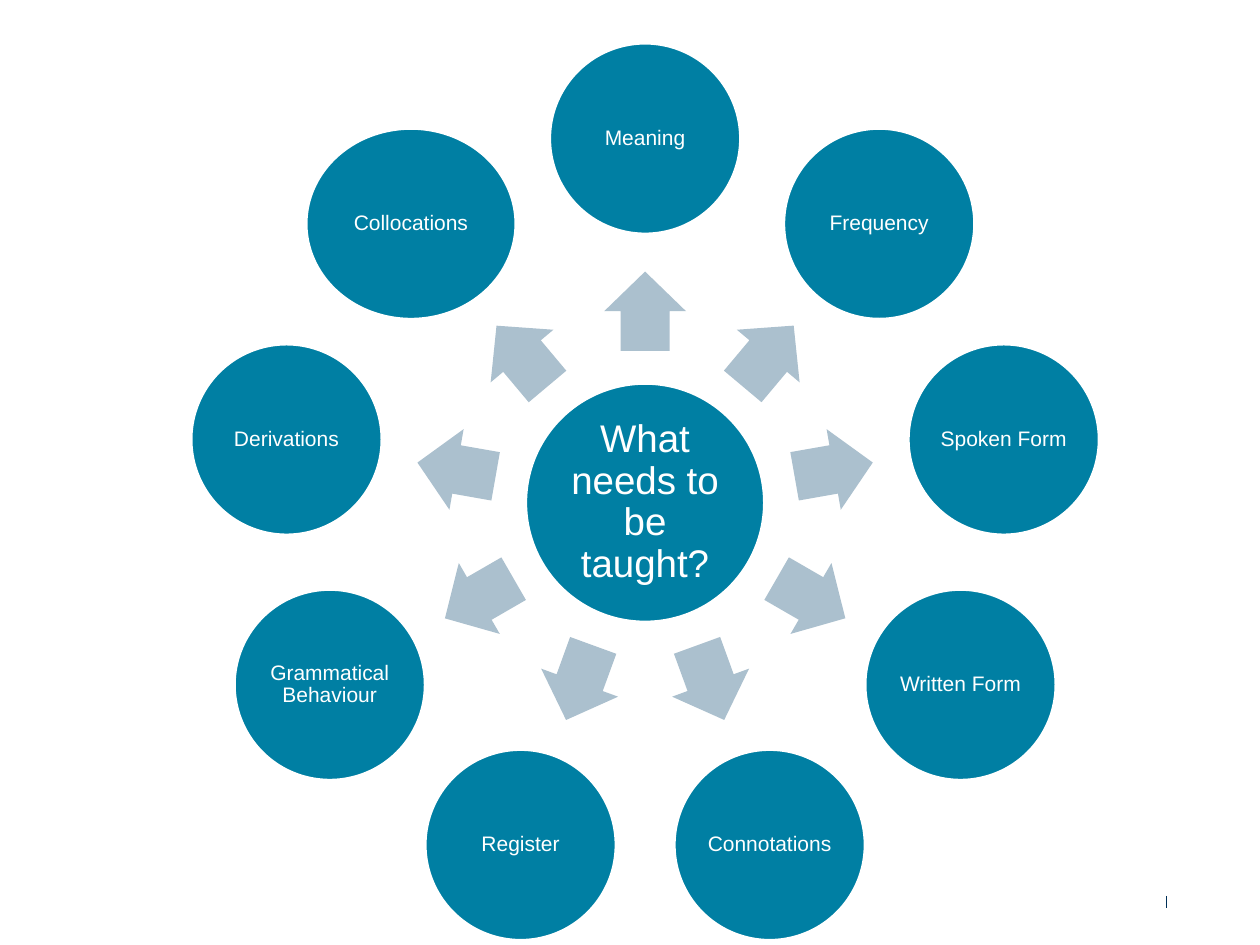
from dataclasses import dataclass
from math import cos, radians, sin

from lxml.etree import SubElement
from pptx import Presentation
from pptx.dml.color import RGBColor
from pptx.enum.shapes import MSO_CONNECTOR, MSO_SHAPE
from pptx.enum.text import MSO_ANCHOR, PP_ALIGN
from pptx.oxml.ns import qn
from pptx.util import Inches, Pt


@dataclass(frozen=True)
class Theme:
    teal: RGBColor = RGBColor(0x00, 0x7F, 0xA3)
    mist: RGBColor = RGBColor(0xAB, 0xC0, 0xCE)
    navy: RGBColor = RGBColor(0x00, 0x30, 0x57)
    white: RGBColor = RGBColor(0xFF, 0xFF, 0xFF)
    font: str = "Arial"
    hub_size: Pt = Pt(22)
    aspect_size: Pt = Pt(12)
    outline: Pt = Pt(2)
    hairline: Pt = Pt(0.5)


theme = Theme()
deck = Presentation()
deck.slide_width, deck.slide_height = Inches(10), Inches(7.5)
slide = deck.slides.add_slide(deck.slide_layouts[6])


def share(percent):
    """Length as a percentage of the slide width."""
    return round(deck.slide_width * percent / 100)


def add_centred(kind, x, y, width, height, fill):
    shape = slide.shapes.add_shape(
        kind, share(x - width / 2), share(y - height / 2), share(width), share(height))
    shape.shadow.inherit = False
    shape.fill.solid()
    shape.fill.fore_color.rgb = fill
    shape.line.fill.background()
    return shape


# Wheel geometry, in percent of the slide width
HUB_X, HUB_Y, HUB_SIZE = 51.2, 39.9, 19
ARROW_RADIUS, ARROW_LENGTH, ARROW_WIDTH = 15.2, 6.3, 6.5
ASPECT_RADIUS, ASPECT_SIZE, WIDE_ASPECT = 28.9, 15.2, 16.7

aspects = ["Meaning", "Frequency", "Spoken Form", "Written Form", "Connotations",
           "Register", "Grammatical Behaviour", "Derivations", "Collocations"]

# Footer tick
tick = slide.shapes.add_connector(
    MSO_CONNECTOR.STRAIGHT, share(92.6), share(71.1), share(92.6), share(72.1))
tick.line.color.rgb = theme.navy
tick.line.width = theme.hairline
SubElement(tick._element.spPr, qn("a:effectLst"))

# Hub, then an arrow and a circle for each aspect, clockwise from the top
hub = add_centred(MSO_SHAPE.OVAL, HUB_X, HUB_Y, HUB_SIZE, HUB_SIZE, theme.teal)
circles = [(hub, "What needs to be taught?", theme.hub_size, 0.3)]
for index, aspect in enumerate(aspects):
    angle = (270 + index * 360 / len(aspects)) % 360
    across, down = cos(radians(angle)), sin(radians(angle))
    arrow = add_centred(
        MSO_SHAPE.RIGHT_ARROW, HUB_X + ARROW_RADIUS * across, HUB_Y + ARROW_RADIUS * down,
        ARROW_LENGTH, ARROW_WIDTH, theme.mist)
    arrow.rotation = angle
    arrow.adjustments[0], arrow.adjustments[1] = 0.6, 0.5
    width = WIDE_ASPECT if aspect == "Collocations" else ASPECT_SIZE
    circle = add_centred(
        MSO_SHAPE.OVAL, HUB_X + ASPECT_RADIUS * across, HUB_Y + ASPECT_RADIUS * down,
        width, ASPECT_SIZE, theme.teal)
    circles.append((circle, aspect, theme.aspect_size, 0.2))

# Outlines and labels
for circle, label, size, inset in circles:
    circle.line.color.rgb = theme.white
    circle.line.width = theme.outline
    frame = circle.text_frame
    frame.word_wrap = True
    frame.vertical_anchor = MSO_ANCHOR.MIDDLE
    frame.margin_left = frame.margin_right = share(inset)
    frame.margin_top = frame.margin_bottom = share(inset)
    paragraph = frame.paragraphs[0]
    paragraph.alignment = PP_ALIGN.CENTER
    paragraph.line_spacing = 0.9
    run = paragraph.add_run()
    run.text = label
    run.font.name = theme.font
    run.font.size = size
    run.font.color.rgb = theme.white

deck.save("out.pptx")
